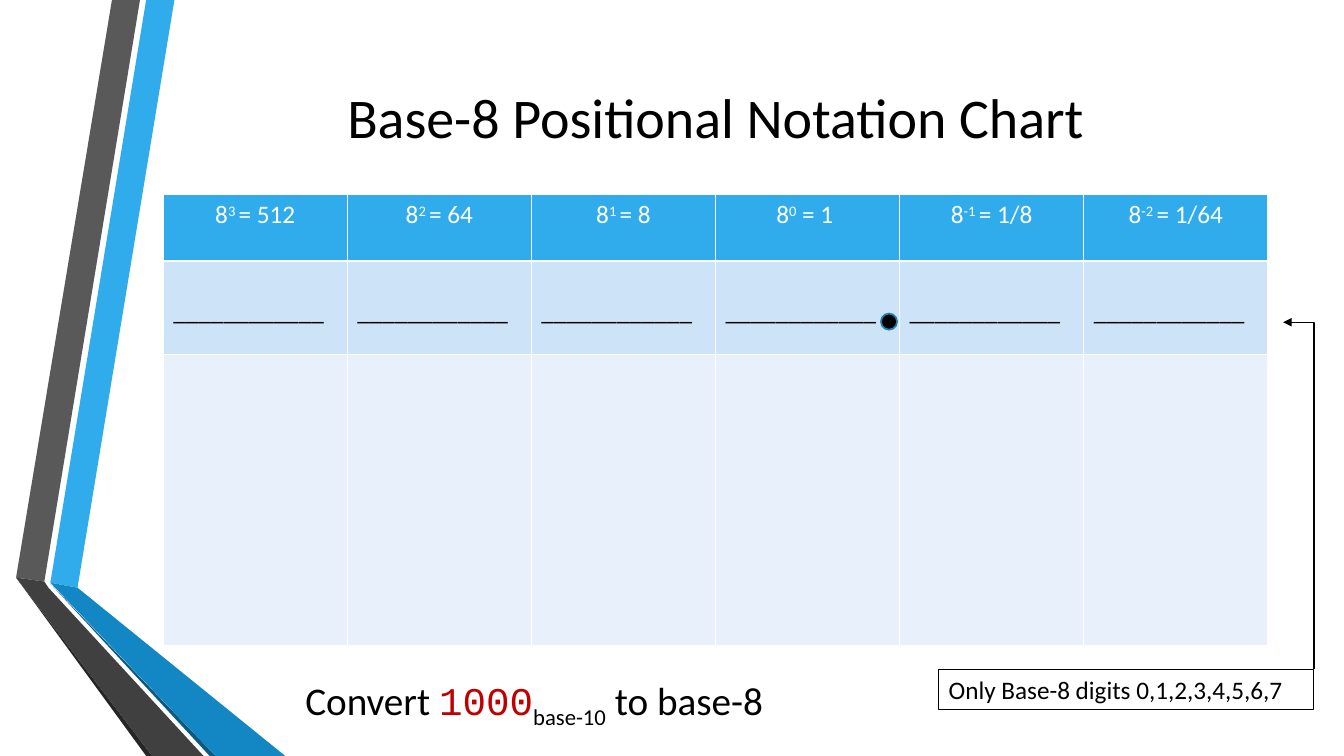
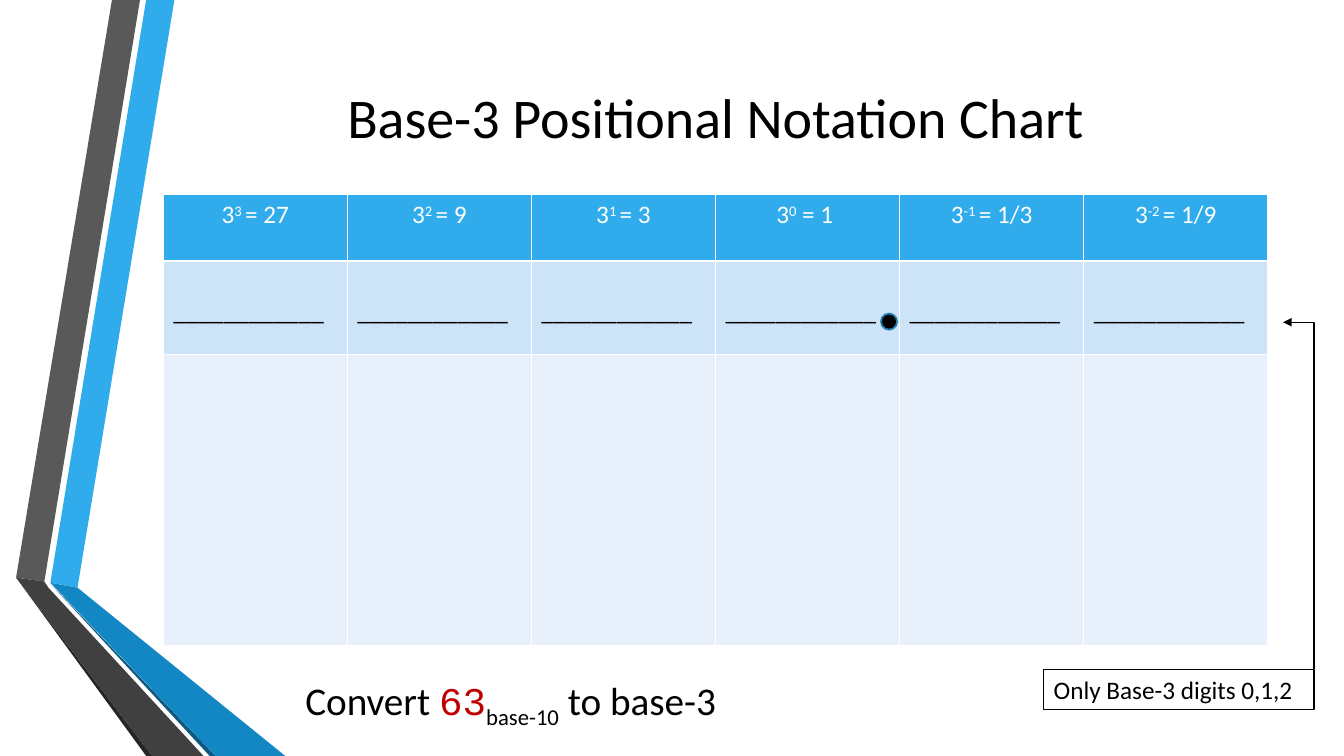
from dataclasses import dataclass
from typing import Any

from lxml import etree
from pptx import Presentation
from pptx import util as u
from pptx.dml import color
from pptx.enum import shapes, text
from pptx.oxml import ns

SKY, GREY, BLACK, WHITE, RED = "30ACEC", "595959", "000000", "FFFFFF", "C00000"
RIM, BAND, PALE = "247FAF", "CDE3F8", "E8F1FB"
FONT, MONO = "Calibri", "Courier New"
LEFT, TOP, COL = 116.6, 139, 131.5
ROWS = (47.5, 67, 208)
POWERS = range(3, -3, -1)
EDGE, NOTE_TOP, TIP_X, TIP_Y = 938.6, 478, 916.6, 230.2
DOT = 11.5


@dataclass(frozen=True)
class Ribbon:
    fill: str
    points: tuple[tuple[float, float], ...]


@dataclass(frozen=True)
class Span:
    words: str
    size: float
    tint: str = BLACK
    font: str = FONT
    shift: int = 0


@dataclass(frozen=True)
class Chart:
    base: int
    number: str
    width: float


RIBBONS = (
    Ribbon(SKY, ((36, 416.2), (55.4, 419.8), (124.6, 0), (104.4, 0))),
    Ribbon(GREY, ((100, 0), (80, 0), (11.5, 412.6), (31.7, 415.4))),
    Ribbon("262626", ((11.5, 412.6), (104.4, 540), (108.7, 540))),
    Ribbon("0C5A82", ((36, 416.9), (149.8, 540), (154.1, 540))),
    Ribbon("1287C3", ((36, 416.2), (154.1, 540), (203.8, 540), (55.4, 419.8))),
    Ribbon("404040", ((145.4, 540), (34.6, 419.8), (31.7, 415.4), (11.5, 412.6), (108.7, 540))),
)
CHARTS = (Chart(8, "1000", 268), Chart(3, "63", 193))


def rgb(code: str) -> color.RGBColor:
    return color.RGBColor.from_string(code)


def paint(item: Any, code: str) -> None:
    item.fill.solid()
    item.fill.fore_color.rgb = rgb(code)


def style(run: Any, span: Span) -> None:
    run.font.name = span.font
    run.font.size = u.Pt(span.size)
    run.font.bold = False
    run.font.color.rgb = rgb(span.tint)
    if span.shift:
        run._r.get_or_add_rPr().set("baseline", str(span.shift * 1000))


def write(para: Any, *spans: Span) -> None:
    for span in spans:
        run = para.add_run()
        run.text = span.words
        style(run, span)


def add_ribbons(slide: Any, layout: Any) -> None:
    tree = layout.shapes.element
    for place, ribbon in enumerate(RIBBONS, 2):
        first, *rest = [(u.Pt(x), u.Pt(y)) for x, y in ribbon.points]
        path = slide.shapes.build_freeform(*first)
        path.add_line_segments(rest, close=True)
        shape = path.convert_to_shape()
        shape.shadow.inherit = False
        paint(shape, ribbon.fill)
        shape.line.fill.background()
        tree.insert(place, shape.element)


def set_title(slide: Any, words: str) -> None:
    frame = slide.shapes.title.text_frame
    frame.text = words
    frame.vertical_anchor = text.MSO_ANCHOR.MIDDLE
    para = frame.paragraphs[0]
    para.alignment = text.PP_ALIGN.CENTER
    style(para.runs[0], Span(words, 40))


def head(base: int, power: int) -> tuple[Span, ...]:
    value = str(base**power) if power >= 0 else f"1/{base**-power}"
    sign, tail = (f"{power} ", f"= {value}") if power else ("0", " = 1 ")
    return (
        Span(str(base), 18, WHITE),
        Span(sign, 18, WHITE, shift=30),
        Span(tail, 18, WHITE),
    )


def add_grid(slide: Any, base: int) -> None:
    grid = slide.shapes.add_table(
        len(ROWS), len(POWERS), u.Pt(LEFT), u.Pt(TOP),
        u.Pt(COL * len(POWERS)), u.Pt(sum(ROWS)),
    ).table
    for row, high in zip(grid.rows, ROWS):
        row.height = u.Pt(high)
    for col, power in enumerate(POWERS):
        grid.columns[col].width = u.Pt(COL)
        top, blank, work = (grid.cell(row, col) for row in range(len(ROWS)))
        for cell, fill in ((top, SKY), (blank, BAND), (work, PALE)):
            paint(cell, fill)
        para = top.text_frame.paragraphs[0]
        para.alignment = text.PP_ALIGN.CENTER
        write(para, *head(base, power))
        blank.margin_top = u.Pt(25.6)
        write(blank.text_frame.paragraphs[0], Span("_" * 12, 18))


def add_dot(slide: Any) -> None:
    dot = slide.shapes.add_shape(
        shapes.MSO_SHAPE.OVAL, u.Pt(629.3), u.Pt(224), u.Pt(DOT), u.Pt(DOT)
    )
    dot.shadow.inherit = False
    paint(dot, BLACK)
    dot.line.color.rgb = rgb(RIM)
    dot.line.width = u.Pt(1.25)


def add_box(slide: Any, left: float, top: float, wide: float, high: float, *spans: Span) -> Any:
    box = slide.shapes.add_textbox(u.Pt(left), u.Pt(top), u.Pt(wide), u.Pt(high))
    box.text_frame.word_wrap = True
    write(box.text_frame.paragraphs[0], *spans)
    return box


def edge(line: Any) -> None:
    line.color.rgb = rgb(BLACK)
    line.width = u.Pt(0.75)


def add_arrow(slide: Any) -> None:
    arrow = slide.shapes.add_connector(
        shapes.MSO_CONNECTOR.ELBOW, u.Pt(TIP_X), u.Pt(TIP_Y), u.Pt(EDGE), u.Pt(NOTE_TOP)
    )
    edge(arrow.line)
    props = arrow.element.spPr
    bends = props.find(ns.qn("a:prstGeom")).find(ns.qn("a:avLst"))
    etree.SubElement(bends, ns.qn("a:gd"), name="adj1", fmla="val 100000")
    etree.SubElement(props.find(ns.qn("a:ln")), ns.qn("a:headEnd"), type="triangle")
    etree.SubElement(props, ns.qn("a:effectLst"))


def add_chart(slide: Any, chart: Chart) -> None:
    base = chart.base
    set_title(slide, f"Base-{base} Positional Notation Chart")
    add_grid(slide, base)
    add_dot(slide)
    digits = ",".join(map(str, range(base)))
    note = add_box(
        slide, EDGE - chart.width, NOTE_TOP, chart.width, 29,
        Span(f"Only Base-{base} digits {digits}", 18),
    )
    edge(note.line)
    add_arrow(slide)
    add_box(
        slide, 211, 479.5, 397, 41,
        Span("Convert ", 28),
        Span(chart.number, 28, RED, MONO),
        Span("base-10", 28, shift=-25),
        Span(f" to base-{base}", 28),
    )


def main() -> None:
    deck = Presentation()
    deck.slide_width, deck.slide_height = u.Pt(960), u.Pt(540)
    layout = deck.slide_layouts[5]
    title = layout.placeholders[0]
    title.left, title.top = u.Pt(LEFT), u.Pt(54)
    title.width, title.height = u.Pt(COL * len(POWERS)), u.Pt(57.6)
    slides = [deck.slides.add_slide(layout) for _ in CHARTS]
    add_ribbons(slides[0], layout)
    for slide, chart in zip(slides, CHARTS):
        add_chart(slide, chart)
    deck.save("out.pptx")


if __name__ == "__main__":
    main()
